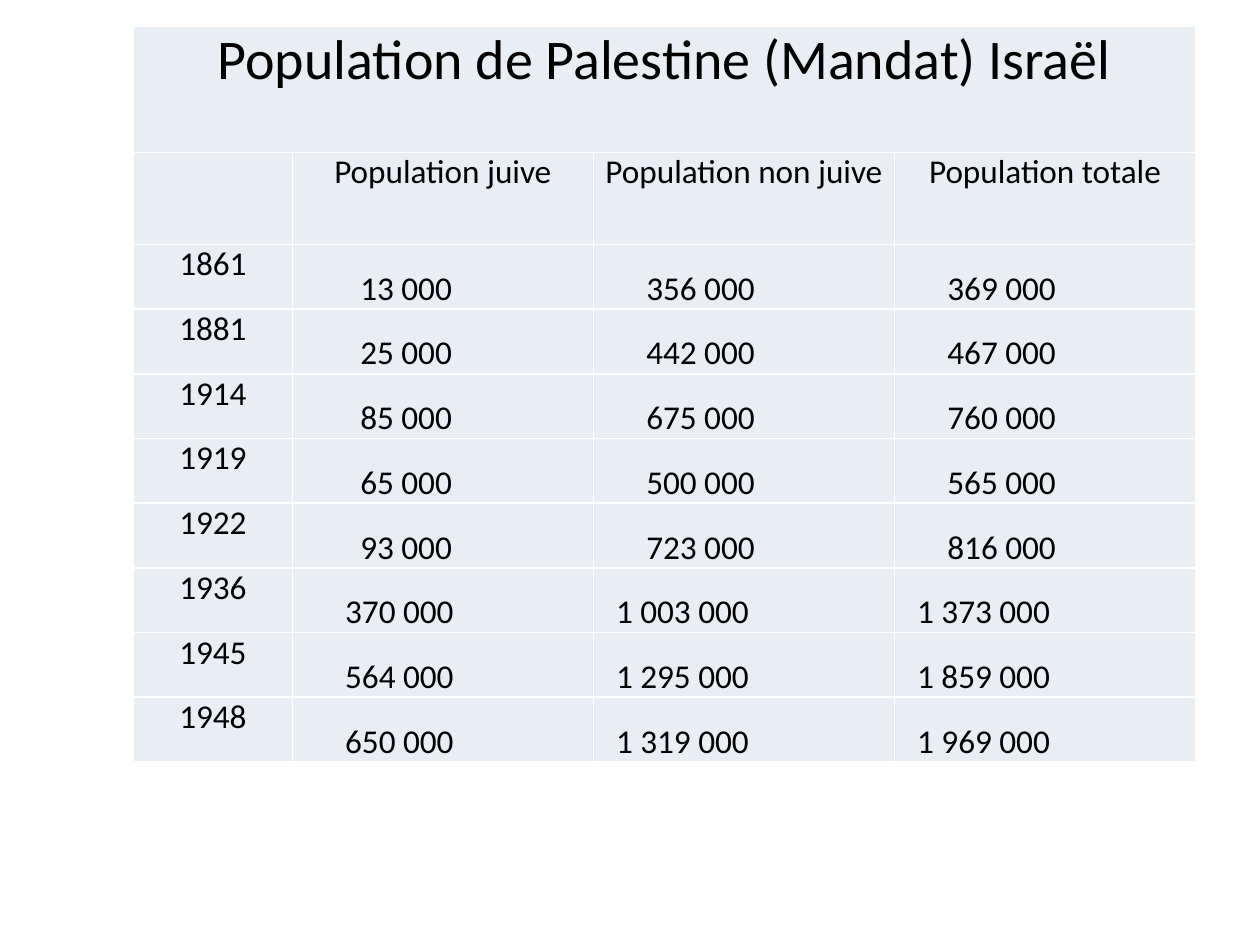
from lxml import etree
from pptx import Presentation
from pptx.dml.color import RGBColor
from pptx.enum.text import MSO_ANCHOR, PP_ALIGN
from pptx.oxml.ns import qn
from pptx.util import Inches, Pt

CENTER, LEFT = PP_ALIGN.CENTER, PP_ALIGN.LEFT
TOP, BOTTOM = MSO_ANCHOR.TOP, MSO_ANCHOR.BOTTOM
BLANK_LAYOUT = 6

CELL_FILL = RGBColor(0xE9, 0xED, 0xF4)
TEXT_COLOR = RGBColor(0, 0, 0)
BORDER_COLOR = RGBColor(0xFF, 0xFF, 0xFF)
FONT = "Calibri"

TITLE = "Population de Palestine (Mandat) Israël"
HEADERS = ["", "Population juive", "Population non juive", "Population totale"]
POPULATION = [
    ["1861", "13 000", "356 000", "369 000"],
    ["1881", "25 000", "442 000", "467 000"],
    ["1914", "85 000", "675 000", "760 000"],
    ["1919", "65 000", "500 000", "565 000"],
    ["1922", "93 000", "723 000", "816 000"],
    ["1936", "370 000", "1 003 000", "1 373 000"],
    ["1945", "564 000", "1 295 000", "1 859 000"],
    ["1948", "650 000", "1 319 000", "1 969 000"],
]
TITLE_HEIGHT, HEADER_HEIGHT = 1, 0.73
YEAR_WIDTH = 1.26


def set_borders(cell):
    properties = cell._tc.get_or_add_tcPr()
    for index, side in enumerate(("lnL", "lnR", "lnT", "lnB")):
        line = etree.Element(qn(f"a:{side}"), w=str(Pt(1)))
        fill = etree.SubElement(line, qn("a:solidFill"))
        etree.SubElement(fill, qn("a:srgbClr"), val=str(BORDER_COLOR))
        properties.insert(index, line)


def format_cell(cell, text, size=19, alignment=CENTER, anchor=TOP, indent=0):
    cell.margin_left = Inches(indent)
    cell.margin_right = cell.margin_top = cell.margin_bottom = 0
    cell.vertical_anchor = anchor
    cell.fill.solid()
    cell.fill.fore_color.rgb = CELL_FILL
    set_borders(cell)
    cell.text_frame.text = text
    paragraph = cell.text_frame.paragraphs[0]
    paragraph.alignment = alignment
    font = paragraph.font
    for run in paragraph.runs:
        font = run.font
        font.name = FONT
        font.size = Pt(size)
        font.color.rgb = TEXT_COLOR


def number_indent(number):
    """Indent that lines up the ends of the numbers, in inches."""
    return 0.12 * (10.5 - len(number))


def add_population_table(slide, left, top, width, height):
    row_count, column_count = len(POPULATION) + 2, len(HEADERS)
    frame = slide.shapes.add_table(row_count, column_count, Inches(left),
                                   Inches(top), Inches(width), Inches(height))
    table = frame.table
    table.first_row = table.horz_banding = False

    number_width = (width - YEAR_WIDTH) / (column_count - 1)
    for index, column in enumerate(table.columns):
        column.width = Inches(number_width if index else YEAR_WIDTH)
    year_height = (height - TITLE_HEIGHT - HEADER_HEIGHT) / len(POPULATION)
    heights = [TITLE_HEIGHT, HEADER_HEIGHT] + [year_height] * len(POPULATION)
    for row, row_height in zip(table.rows, heights):
        row.height = Inches(row_height)

    title_cell = table.cell(0, 0)
    title_cell.merge(table.cell(0, column_count - 1))
    format_cell(title_cell, TITLE, size=32)
    for column, header in enumerate(HEADERS):
        format_cell(table.cell(1, column), header)
    for row, (year, *numbers) in enumerate(POPULATION, start=2):
        format_cell(table.cell(row, 0), year)
        for column, number in enumerate(numbers, start=1):
            format_cell(table.cell(row, column), number, alignment=LEFT,
                        anchor=BOTTOM, indent=number_indent(number))


def main():
    presentation = Presentation()
    presentation.slide_width = Inches(10)
    presentation.slide_height = Inches(7.5)
    slide = presentation.slides.add_slide(presentation.slide_layouts[BLANK_LAYOUT])
    add_population_table(slide, 1.06, 0.21, 8.43, 5.84)
    presentation.save("out.pptx")


if __name__ == "__main__":
    main()
